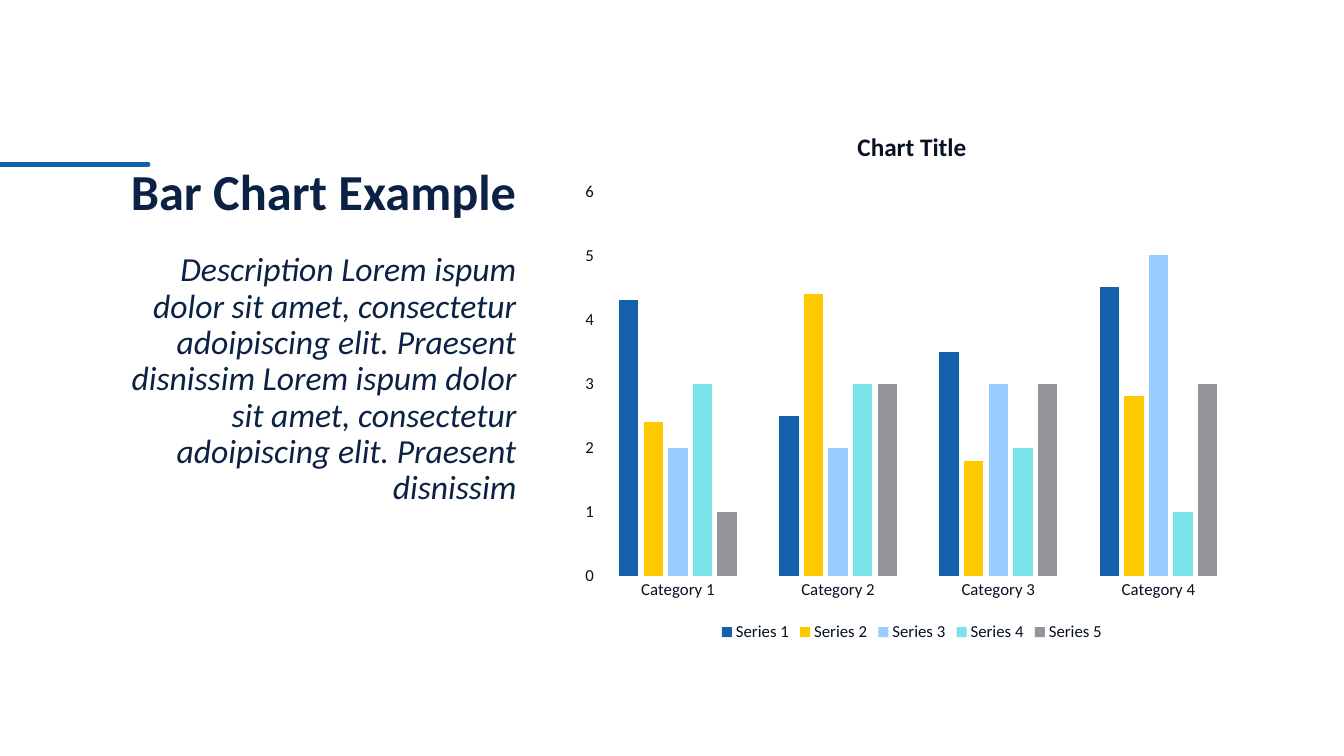
from lxml.etree import SubElement
from pptx import Presentation
from pptx.chart.data import CategoryChartData
from pptx.dml.color import RGBColor
from pptx.enum.chart import XL_CHART_TYPE, XL_LEGEND_POSITION, XL_TICK_MARK
from pptx.enum.shapes import MSO_CONNECTOR
from pptx.enum.text import MSO_ANCHOR, PP_ALIGN
from pptx.oxml.ns import qn
from pptx.util import Inches, Pt

FONT = "Calibri"
NAVY = "0C2244"
INK = "061122"
BLUE = "1460AA"
WHITE = "FFFFFF"
CATEGORIES = ["Category 1", "Category 2", "Category 3", "Category 4"]
SERIES = [
    ("Series 1", (4.3, 2.5, 3.5, 4.5), BLUE),
    ("Series 2", (2.4, 4.4, 1.8, 2.8), "FFC900"),
    ("Series 3", (2, 2, 3, 5), "99CCFF"),
    ("Series 4", (3, 3, 2, 1), "79E3E9"),
    ("Series 5", (1, 3, 3, 3), "939598"),
]
DESCRIPTION = (
    "Description Lorem ispum dolor sit amet, consectetur adoipiscing elit. "
    "Praesent disnissim Lorem ispum dolor sit amet, consectetur adoipiscing "
    "elit. Praesent disnissim"
)


def color(value):
    """Turn a hex string into a colour."""
    return RGBColor.from_string(value)


def style_font(font, size, value, bold=False, italic=False):
    """Give a font its face, size, colour and emphasis."""
    font.name = FONT
    font.size = Pt(size)
    font.color.rgb = color(value)
    font.bold = bold
    font.italic = italic


def add_accent_line(page, left, top, width):
    """Draw the round-ended rule at the slide's left edge."""
    rule = page.shapes.add_connector(
        MSO_CONNECTOR.STRAIGHT, Inches(left), Inches(top),
        Inches(left + width), Inches(top))
    rule.line.color.rgb = color(BLUE)
    rule.line.width = Pt(3.25)
    rule.line._get_or_add_ln().set("cap", "rnd")
    SubElement(rule._element.spPr, qn("a:effectLst"))


def add_right_text(page, text, left, top, width, height, size,
                   anchor=MSO_ANCHOR.TOP, bold=False, italic=False):
    """Add a right-aligned paragraph in the given box."""
    box = page.shapes.add_textbox(
        Inches(left), Inches(top), Inches(width), Inches(height))
    frame = box.text_frame
    frame.word_wrap = True
    frame.vertical_anchor = anchor
    frame.text = text
    para = frame.paragraphs[0]
    para.alignment = PP_ALIGN.RIGHT
    para.line_spacing = 0.9
    style_font(para.runs[0].font, size, NAVY, bold, italic)


def add_text_column(page, left, top, width):
    """Place the heading and the description below it."""
    add_right_text(page, "Bar Chart Example", left, top, width, 1.75, 36,
                   MSO_ANCHOR.BOTTOM, bold=True)
    add_right_text(page, DESCRIPTION, left, top + 1.96, width, 3.96, 24,
                   italic=True)


def style_axes(chart):
    """Set the fonts, lines, ticks and scale of both axes."""
    for axis in (chart.category_axis, chart.value_axis):
        axis.major_tick_mark = XL_TICK_MARK.NONE
        axis.minor_tick_mark = XL_TICK_MARK.NONE
        style_font(axis.tick_labels.font, 12, INK)
    category_line = chart.category_axis.format.line
    grid_line = chart.value_axis.major_gridlines.format.line
    for line in (category_line, grid_line):
        line.color.rgb = color(WHITE)
        line.width = Pt(0.75)
    chart.value_axis.format.line.fill.background()
    chart.value_axis.minimum_scale = 0
    chart.value_axis.maximum_scale = 6
    chart.value_axis.major_unit = 1


def add_column_chart(page, left, top, width, height):
    """Add the clustered column chart with its title and legend."""
    data = CategoryChartData()
    data.categories = CATEGORIES
    for name, values, _ in SERIES:
        data.add_series(name, values)
    chart = page.shapes.add_chart(
        XL_CHART_TYPE.COLUMN_CLUSTERED, Inches(left), Inches(top),
        Inches(width), Inches(height), data).chart
    style_font(chart.font, 10, INK)

    chart.has_title = True
    title = chart.chart_title
    title.include_in_layout = False
    title.text_frame.text = "Chart Title"
    style_font(title.text_frame.paragraphs[0].runs[0].font, 18, INK, bold=True)

    chart.has_legend = True
    chart.legend.position = XL_LEGEND_POSITION.BOTTOM
    chart.legend.include_in_layout = False
    style_font(chart.legend.font, 12, INK)

    style_axes(chart)
    plot = chart.plots[0]
    plot.vary_by_categories = False
    plot.gap_width = 219
    plot.overlap = -27
    for series, (_, _, fill) in zip(plot.series, SERIES):
        series.format.fill.solid()
        series.format.fill.fore_color.rgb = color(fill)


def main():
    """Build the slide and save the deck."""
    deck = Presentation()
    deck.slide_width = Inches(13.33)
    deck.slide_height = Inches(7.5)
    page = deck.slides.add_slide(deck.slide_layouts[6])
    add_accent_line(page, 0, 1.63, 1.47)
    add_column_chart(page, 5.67, 1.08, 6.75, 5.33)
    add_text_column(page, 0.92, 0.5, 4.3)
    deck.save("out.pptx")


if __name__ == "__main__":
    main()
